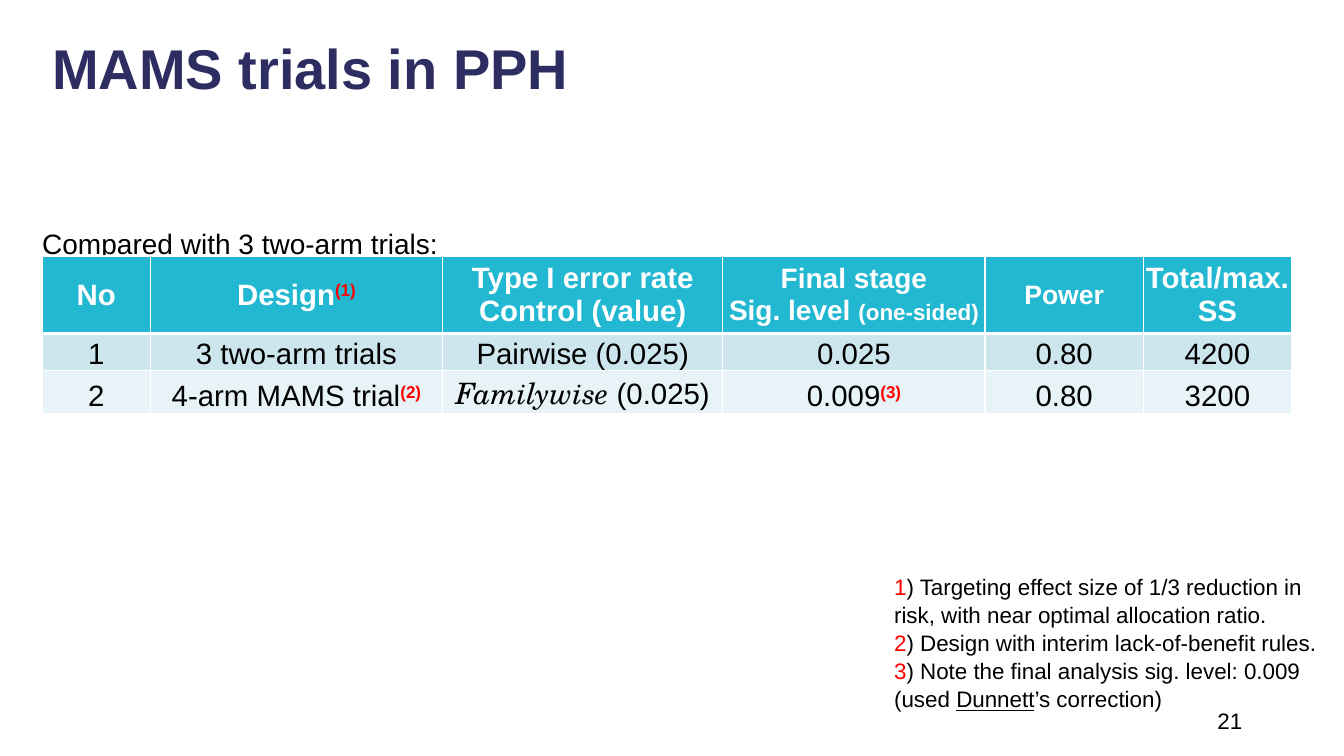
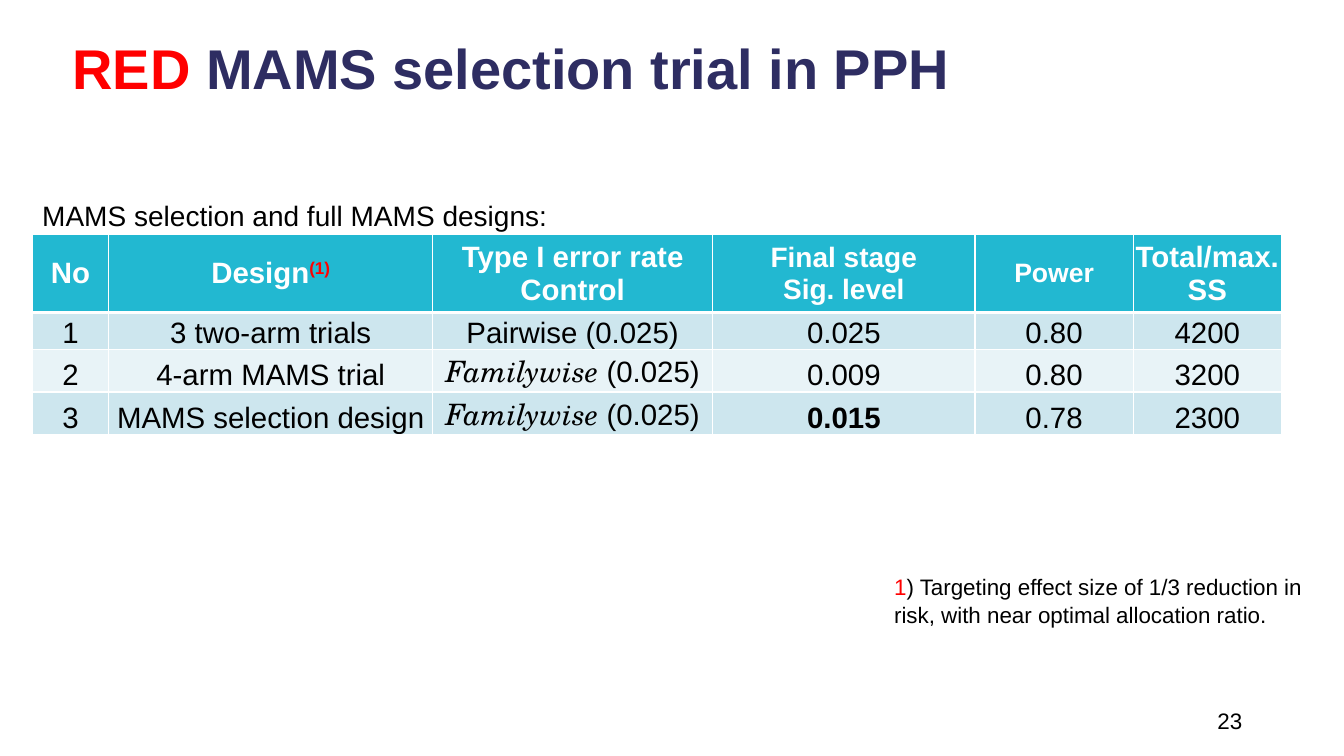
"""Build two slides comparing MAMS trial designs in PPH."""
from pptx import Presentation
from pptx.dml.color import RGBColor
from pptx.enum.text import MSO_ANCHOR, PP_ALIGN
from pptx.oxml import parse_xml
from pptx.oxml.ns import nsdecls
from pptx.util import Inches, Pt

FONT, SCRIPT_FONT = "Arial", "TeX Gyre Schola"
NAVY, RED, BLACK, WHITE = "2E2D62", "FF0000", "000000", "FFFFFF"
HEADER_FILL, BAND_FILLS = "22B8D1", ("CDE6EE", "E8F3F7")
HEADER_HEIGHT, FIRST_ROW_HEIGHT, ROW_HEIGHT = 0.77, 0.37, 0.42
SHARED_WIDTHS = [2.78, 2.6, 1.57, 1.47]
HEADER_SIZES = [21, 21, 21, 20, 19, 21]
BODY_SIZES = [21] * 6


def red(text):
    return text, {"color": RED}


def mark(number):
    return f"({number})", {"color": RED, "bold": True, "baseline": 30000}


FAMILYWISE = [[("Familywise", {"name": SCRIPT_FONT, "italic": True}), " (0.025)"]]
EFFECT_NOTE = [red("1"), ") Targeting effect size of 1/3 reduction in risk, "
               "with near optimal allocation ratio."]


def header(control, level):
    return ["No", [["Design", mark(1)]], [["Type I error rate"], [control]],
            [["Final stage"], level], "Power", [["Total/max."], ["SS"]]]


SLIDES = [
    {
        "title": ["MAMS trials in PPH"], "title_left": 0.42, "number": "21",
        "lead": "Compared with 3 two-arm trials:", "lead_top": 2.16,
        "table_at": (0.42, 2.54), "widths": [1.07, 2.9],
        "rows": [
            header("Control (value)", ["Sig. level ", ("(one-sided)", {"size": 16})]),
            ["1", "3 two-arm trials", "Pairwise (0.025)", "0.025", "0.80", "4200"],
            ["2", [["4-arm MAMS trial", mark(2)]], FAMILYWISE, [["0.009", mark(3)]],
             "0.80", "3200"],
        ],
        "notes": [
            EFFECT_NOTE,
            [red("2"), ") Design with interim lack-of-benefit rules."],
            [red("3"), ") Note the final analysis sig. level: 0.009 (used ",
             ("Dunnett", {"underline": True}), "’s correction)"],
        ],
    },
    {
        "title": [red("RED"), " MAMS selection trial in PPH"], "title_left": 0.62,
        "number": "23",
        "lead": "MAMS selection and full MAMS designs:", "lead_top": 1.89,
        "table_at": (0.32, 2.33), "widths": [0.76, 3.21],
        "rows": [
            header("Control", ["Sig. level"]),
            ["1", "3 two-arm trials", "Pairwise (0.025)", "0.025", "0.80", "4200"],
            ["2", "4-arm MAMS trial", FAMILYWISE, "0.009", "0.80", "3200"],
            ["3", "MAMS selection design", FAMILYWISE, [[("0.015", {"bold": True})]],
             "0.78", "2300"],
        ],
        "notes": [EFFECT_NOTE],
    },
]


def rgb(value):
    return RGBColor.from_string(value)


def style_font(font, **style):
    for key, value in style.items():
        if key == "color":
            font.color.rgb = rgb(value)
        else:
            setattr(font, key, Pt(value) if key == "size" else value)


def write(frame, paragraphs, size, color=BLACK, bold=False, align=PP_ALIGN.LEFT,
          spacing=None):
    for index, spans in enumerate(paragraphs):
        para = frame.add_paragraph() if index else frame.paragraphs[0]
        para.alignment = align
        if spacing:
            para.line_spacing = spacing
        style_font(para.font, name=FONT, size=size, color=color, bold=bold)
        for item in spans:
            text, style = (item, {}) if isinstance(item, str) else item
            span = para.add_run()
            span.text = text
            style_font(span.font, **{k: v for k, v in style.items() if k != "baseline"})
            if "baseline" in style:
                span._r.get_or_add_rPr().set("baseline", str(style["baseline"]))


def add_text(page, at, paragraphs, size, anchor=MSO_ANCHOR.TOP, **style):
    frame = page.shapes.add_textbox(*map(Inches, at)).text_frame
    frame.word_wrap = True
    frame.vertical_anchor = anchor
    write(frame, paragraphs, size, **style)


def set_borders(cell, bottom):
    properties = cell._tc.get_or_add_tcPr()
    widths = {"lnL": 1, "lnR": 1, "lnT": 1, "lnB": bottom}
    for index, (side, width) in enumerate(widths.items()):
        properties.insert(index, parse_xml(
            f'<a:{side} {nsdecls("a")} w="{Pt(width)}"><a:solidFill>'
            f'<a:srgbClr val="{WHITE}"/></a:solidFill></a:{side}>'))


def add_design_table(page, at, widths, rows):
    extra_rows = len(rows) - 2
    heights = [HEADER_HEIGHT, FIRST_ROW_HEIGHT] + [ROW_HEIGHT] * extra_rows
    size = (sum(widths), sum(heights))
    table = page.shapes.add_table(len(rows), len(widths),
                                  *map(Inches, at + size)).table
    table.horz_banding = False
    for column, width in zip(table.columns, widths):
        column.width = Inches(width)
    for number, (row, height, contents) in enumerate(zip(table.rows, heights, rows)):
        row.height = Inches(height)
        is_header = number == 0
        fill = HEADER_FILL if is_header else BAND_FILLS[(number - 1) % 2]
        sizes = HEADER_SIZES if is_header else BODY_SIZES
        for cell, content, points in zip(row.cells, contents, sizes):
            cell.margin_left = cell.margin_right = Inches(0)
            cell.margin_top = cell.margin_bottom = Inches(0)
            cell.vertical_anchor = MSO_ANCHOR.MIDDLE if is_header else MSO_ANCHOR.BOTTOM
            cell.fill.solid()
            cell.fill.fore_color.rgb = rgb(fill)
            set_borders(cell, 3 if is_header else 1)
            paragraphs = [[content]] if isinstance(content, str) else content
            write(cell.text_frame, paragraphs, points, bold=is_header,
                  color=WHITE if is_header else BLACK, align=PP_ALIGN.CENTER)


def add_page(deck, content):
    page = deck.slides.add_slide(deck.slide_layouts[6])
    add_text(page, (content["title_left"], 0.15, 11.5, 1.11), [content["title"]], 40,
             anchor=MSO_ANCHOR.MIDDLE, color=NAVY, bold=True, spacing=0.9)
    add_text(page, (9.42, 6.95, 3, 0.4), [[content["number"]]], 16,
             anchor=MSO_ANCHOR.MIDDLE, align=PP_ALIGN.RIGHT)
    add_text(page, (0.32, content["lead_top"], 6, 0.38), [[content["lead"]]], 20,
             spacing=1.1)
    add_design_table(page, content["table_at"], content["widths"] + SHARED_WIDTHS,
                     content["rows"])
    notes = content["notes"]
    add_text(page, (8.77, 5.62, 4.54, 0.5 + 0.41 * len(notes)), notes, 16, spacing=1.05)


def main():
    deck = Presentation()
    deck.slide_width, deck.slide_height = Inches(13.33), Inches(7.5)
    for content in SLIDES:
        add_page(deck, content)
    deck.save("out.pptx")


if __name__ == "__main__":
    main()
